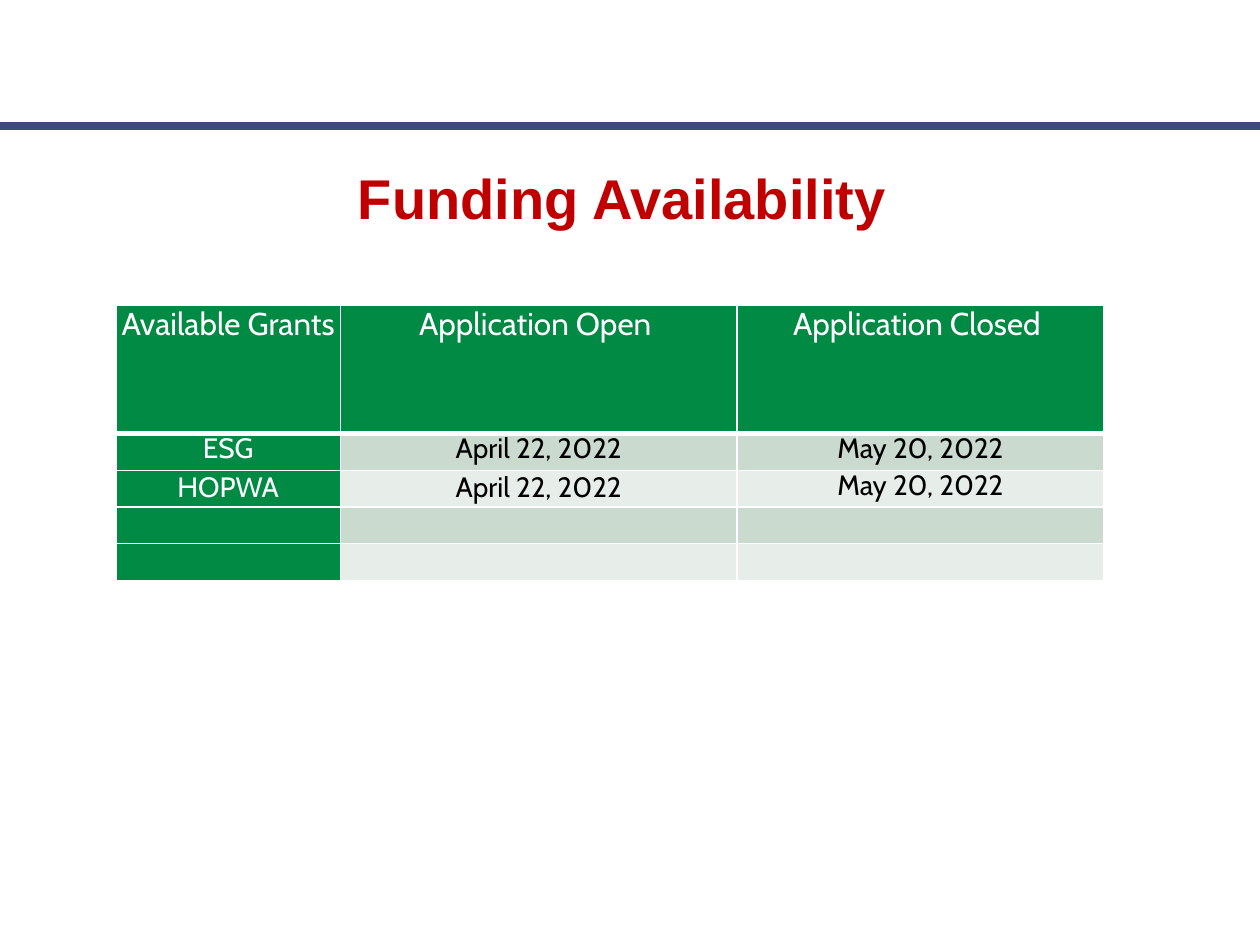
import pptx
import pptx.util
import pptx.dml.color
import pptx.enum.shapes
import pptx.enum.text
import lxml.etree

Cm, Pt = pptx.util.Cm, pptx.util.Pt
GREEN, WHITE, BLACK = "008A43", "FFFFFF", "000000"
BANDS = ["CBDACF", "E7EDE9"]
ROWS = [
    ["Available Grants", "Application Open ", "Application Closed "],
    ["ESG", "April 22, 2022", "May 20, 2022"],
    ["HOPWA", "April 22, 2022", "May 20, 2022"],
    ["", "", ""],
    ["", "", ""],
]
WIDTHS = [4.52, 8, 7.39]
HEIGHTS = [2.59] + [0.74] * 4


def color(code):
    return pptx.dml.color.RGBColor.from_string(code)


def write(frame, text, font, size, code, bold=False):
    """Centre one line of text in a frame without margins."""
    frame.margin_left = frame.margin_right = 0
    frame.margin_top = frame.margin_bottom = 0
    frame.text = text
    par = frame.paragraphs[0]
    par.alignment = pptx.enum.text.PP_ALIGN.CENTER
    for run in par.runs:
        run.font.name = font
        run.font.size = Pt(size)
        run.font.bold = bold
        run.font.color.rgb = color(code)
    return par


def edge(cell, side, width):
    """Draw one white border of a cell."""
    tag = pptx.oxml.ns.qn
    line = lxml.etree.SubElement(cell._tc.get_or_add_tcPr(), tag(f"a:ln{side}"),
                                 w=str(Pt(width)))
    fill = lxml.etree.SubElement(line, tag("a:solidFill"))
    lxml.etree.SubElement(fill, tag("a:srgbClr"), val=WHITE)


def add_rule(slide, left, top, width):
    line = slide.shapes.add_connector(
        pptx.enum.shapes.MSO_CONNECTOR.STRAIGHT, left, top, left + width, top)
    line.line.color.rgb = color("3E4981")
    line.line.width = Pt(4.5)
    lxml.etree.SubElement(line._element.spPr, pptx.oxml.ns.qn("a:effectLst"))


def add_title(slide, left, top, width, height):
    box = slide.shapes.add_textbox(left, top, width, height)
    box.text_frame.word_wrap = True
    write(box.text_frame, "Funding Availability ", "Arial", 32, "C00000", True)


def add_grants(slide, left, top):
    table = slide.shapes.add_table(
        len(ROWS), len(WIDTHS), left, top,
        Cm(sum(WIDTHS)), Cm(sum(HEIGHTS))).table
    for col, width in zip(table.columns, WIDTHS):
        col.width = Cm(width)
    for r, (row, height) in enumerate(zip(ROWS, HEIGHTS)):
        table.rows[r].height = Cm(height)
        for c, text in enumerate(row):
            cell = table.cell(r, c)
            head = r == 0 or c == 0
            size = 18 if r == 0 else 16
            par = write(cell.text_frame, text, "Cabin", size,
                        WHITE if head else BLACK)
            cell.margin_left = cell.margin_right = 0
            cell.margin_top = cell.margin_bottom = 0

            # Fixed line pitch for the dates; empty cells keep the row low
            if r == 1 or (r, c) == (2, 2):
                par.line_spacing = Pt(18.2)
            if not text:
                par._p.get_or_add_endParaRPr().set("sz", str(size * 100))

            # White grid, thicker below the header
            for side in "LRTB":
                thick = (r, side) in [(0, "B"), (1, "T")]
                edge(cell, side, 3 if thick else 1)
            cell.fill.solid()
            cell.fill.fore_color.rgb = color(
                GREEN if head else BANDS[(r - 1) % 2])


def main():
    deck = pptx.Presentation()
    deck.slide_width, deck.slide_height = Cm(25.4), Cm(19.05)
    slide = deck.slides.add_slide(deck.slide_layouts[6])
    add_rule(slide, 0, Cm(2.54), deck.slide_width)
    add_title(slide, Cm(3.58), Cm(3.3), Cm(18.24), Cm(1.37))
    add_grants(slide, Cm(2.34), Cm(6.15))
    deck.save("out.pptx")


if __name__ == "__main__":
    main()
